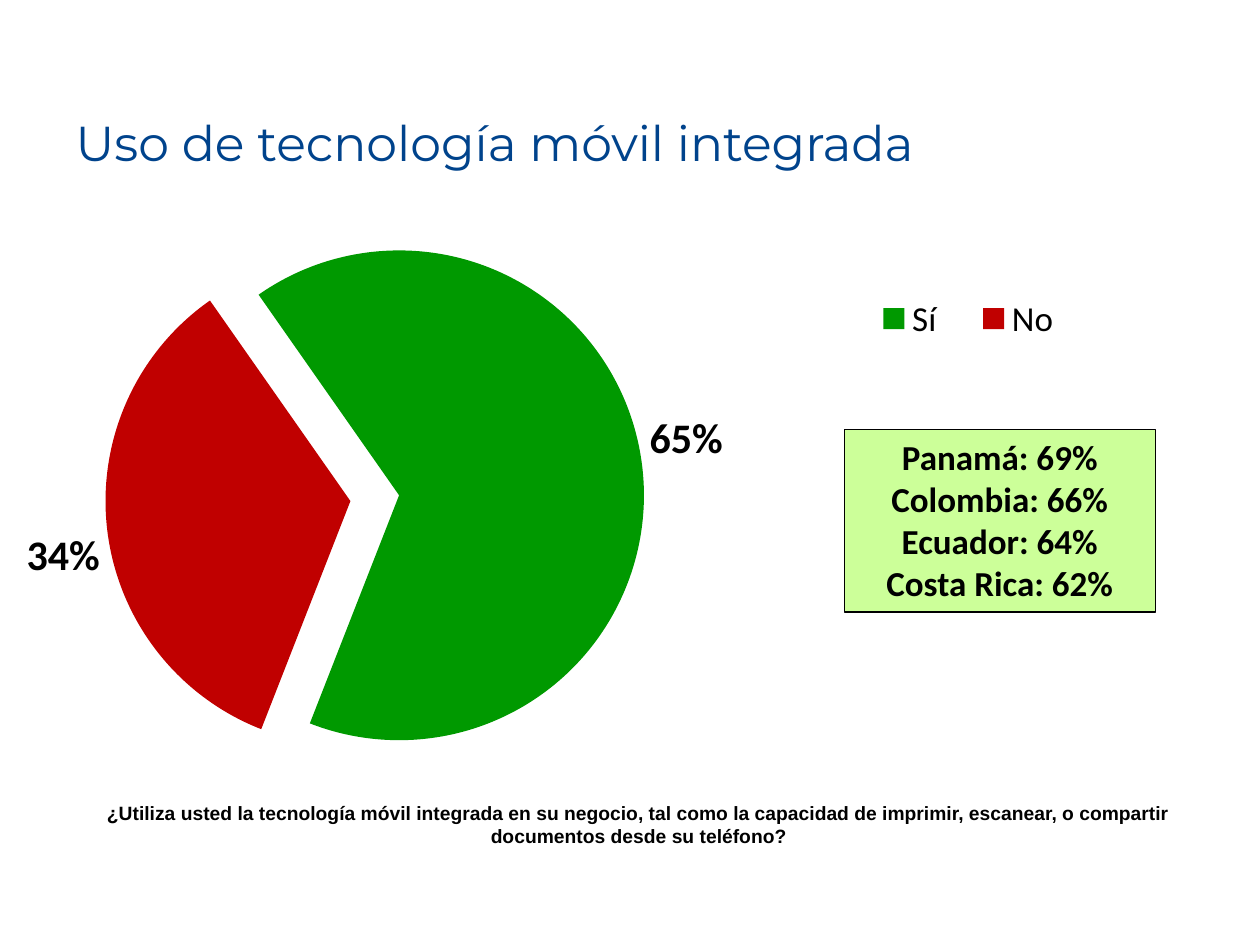
import dataclasses
import typing

import lxml.etree
import pptx
import pptx.chart.data
import pptx.dml.color
import pptx.enum.chart
import pptx.enum.shapes
import pptx.enum.text
import pptx.oxml.ns
import pptx.util

Cm = pptx.util.Cm
Pt = pptx.util.Pt
Align = pptx.enum.text.PP_ALIGN
Anchor = pptx.enum.text.MSO_ANCHOR
qn = pptx.oxml.ns.qn


@dataclasses.dataclass(frozen=True)
class Theme:
    ink: str = "000000"
    blue: str = "00438C"
    lime: str = "CCFF99"
    head: str = "Montserrat"
    body: str = "Calibri"
    note: str = "Arial"
    title: int = 28
    label: int = 24
    text: int = 20
    small: int = 11


@dataclasses.dataclass(frozen=True)
class Slice:
    name: str
    value: float
    color: str


class Box(typing.NamedTuple):
    left: float
    top: float
    width: float
    height: float

    def lengths(self) -> list:
        return [Cm(side) for side in self]


THEME = Theme()
SLICES = [Slice("Sí", 0.65, "009900"), Slice("No", 0.34, "C00000")]
SHARES = {"Panamá": 69, "Colombia": 66, "Ecuador": 64, "Costa Rica": 62}
QUESTION = (
    "¿Utiliza usted la tecnología móvil integrada en su negocio, tal como la "
    "capacidad de imprimir, escanear, o compartir documentos desde su teléfono?"
)


def rgb(color: str) -> pptx.dml.color.RGBColor:
    return pptx.dml.color.RGBColor.from_string(color)


def style(font, size: int, name: str = THEME.body, color: str = THEME.ink,
          bold: bool = False) -> None:
    font.size, font.name, font.bold = Pt(size), name, bold
    font.color.rgb = rgb(color)


def write(shape, text: str, align=Align.CENTER, anchor=Anchor.TOP, **look) -> None:
    """Fill a shape with text, one paragraph a line."""
    frame = shape.text_frame
    frame.word_wrap = True
    frame.auto_size = pptx.enum.text.MSO_AUTO_SIZE.NONE
    frame.vertical_anchor = anchor
    frame.text = text
    for para in frame.paragraphs:
        para.alignment = align
        for run in para.runs:
            style(run.font, **look)


def place(part, index: int, box: Box, inner: bool = False) -> None:
    """Lay out a chart part by fractions of the chart's size."""
    for old in part.findall(qn("c:layout")):
        part.remove(old)
    layout = lxml.etree.Element(qn("c:layout"))
    manual = lxml.etree.SubElement(layout, qn("c:manualLayout"))
    rules = {"layoutTarget": "inner"} if inner else {}
    rules |= {"xMode": "edge", "yMode": "edge"}
    rules |= dict(zip("xywh", box))
    for tag, value in rules.items():
        lxml.etree.SubElement(manual, qn(f"c:{tag}")).set("val", str(value))
    part.insert(index, layout)


def add_pie(slide, slices: list[Slice], box: Box) -> None:
    data = pptx.chart.data.CategoryChartData(number_format="0%")
    data.categories = [item.name for item in slices]
    data.add_series("Series 1", [item.value for item in slices])
    kind = pptx.enum.chart.XL_CHART_TYPE.PIE
    chart = slide.shapes.add_chart(kind, *box.lengths(), data).chart
    chart.has_title = False
    style(chart.font, 18)

    plot = chart.plots[0]
    plot.vary_by_categories = True
    series = plot.series[0]
    burst = lxml.etree.Element(qn("c:explosion"), val="10")
    series._element.find(qn("c:tx")).addnext(burst)
    for index, item in enumerate(slices):
        fill = series.points[index].format.fill
        fill.solid()
        fill.fore_color.rgb = rgb(item.color)

    labels = series.data_labels
    labels.show_value = True
    labels.number_format = "0%"
    labels.number_format_is_linked = False
    labels.position = pptx.enum.chart.XL_LABEL_POSITION.OUTSIDE_END
    style(labels.font, THEME.label, bold=True)

    pie = plot._element
    for old in pie.findall(qn("c:firstSliceAng")):
        pie.remove(old)
    lxml.etree.SubElement(pie, qn("c:firstSliceAng")).set("val", "325")

    chart.has_legend = True
    legend = chart.legend
    legend.position = pptx.enum.chart.XL_LEGEND_POSITION.RIGHT
    legend.include_in_layout = False
    style(legend.font, THEME.text)
    place(legend._element, 1, Box(0.7, 0.15, 0.2, 0.12))
    place(pie.getparent(), 0, Box(0.07, 0.06, 0.47, 0.9), inner=True)


def add_panel(slide, text: str, box: Box) -> None:
    kind = pptx.enum.shapes.MSO_SHAPE.RECTANGLE
    panel = slide.shapes.add_shape(kind, *box.lengths())
    panel.shadow.inherit = False
    panel.fill.solid()
    panel.fill.fore_color.rgb = rgb(THEME.lime)
    panel.line.color.rgb = rgb(THEME.ink)
    panel.line.width = Pt(0.75)
    write(panel, text, size=THEME.text, bold=True)


def main() -> None:
    deck = pptx.Presentation()
    deck.slide_width, deck.slide_height = Cm(25.4), Cm(19.05)
    slide = deck.slides.add_slide(deck.slide_layouts[5])

    add_pie(slide, SLICES, Box(0.18, 3.89, 24.18, 12.07))
    note = slide.shapes.add_textbox(*Box(1.55, 16.03, 22.66, 1.19).lengths())
    write(note, QUESTION, size=THEME.small, name=THEME.note, bold=True)

    title = slide.shapes.title
    title.left, title.top, title.width, title.height = Box(
        1.27, 1.27, 20.04, 3.18).lengths()
    write(title, "Uso de tecnología móvil integrada", align=Align.LEFT,
          anchor=Anchor.MIDDLE, size=THEME.title, name=THEME.head,
          color=THEME.blue)

    lines = [f"{land}: {share}%" for land, share in SHARES.items()]
    add_panel(slide, "\n".join(lines), Box(17.02, 8.66, 6.27, 3.68))
    deck.save("out.pptx")


if __name__ == "__main__":
    main()
